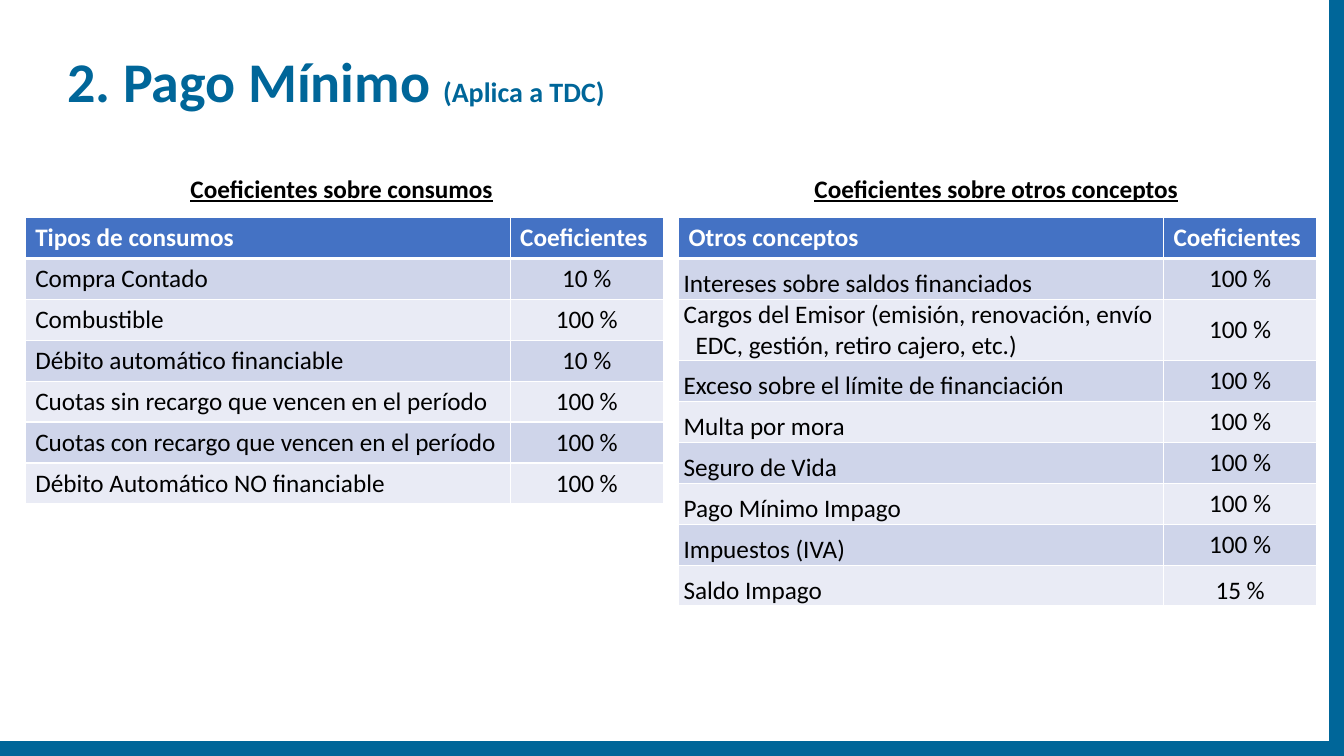
from lxml.etree import SubElement
from pptx import Presentation
from pptx.dml.color import RGBColor
from pptx.enum.shapes import MSO_SHAPE
from pptx.enum.text import MSO_ANCHOR, PP_ALIGN
from pptx.oxml.ns import qn
from pptx.util import Inches, Pt

FONT = "Calibri"
TEAL, BLUE, WHITE, BLACK = "006699", "4472C4", "FFFFFF", "000000"
BANDS = ("CFD5EA", "E9EBF5")
ROW_HEIGHT = 2.84 / 7
TABLE_TOP = 2.16
COLUMN_WIDTHS = (4.81, 1.52)
HANGING = Inches(0.12)

CONSUMPTION = [
    ("Tipos de consumos", "Coeficientes"),
    ("Compra Contado", "10 %"),
    ("Combustible", "100 %"),
    ("Débito automático financiable", "10 %"),
    ("Cuotas sin recargo que vencen en el período", "100 %"),
    ("Cuotas con recargo que vencen en el período", "100 %"),
    ("Débito Automático NO financiable", "100 %"),
]
OTHER_ITEMS = [
    ("Otros conceptos", "Coeficientes"),
    ("Intereses sobre saldos financiados", "100 %"),
    ("Cargos del Emisor (emisión, renovación, envío EDC, gestión, retiro cajero, etc.)", "100 %"),
    ("Exceso sobre el límite de financiación", "100 %"),
    ("Multa por mora", "100 %"),
    ("Seguro de Vida", "100 %"),
    ("Pago Mínimo Impago", "100 %"),
    ("Impuestos (IVA)", "100 %"),
    ("Saldo Impago", "15 %"),
]


def color(value):
    """Return the colour of a hex string."""
    return RGBColor.from_string(value)


def add_span(para, text, size, tint, bold=False, underline=False):
    """Add one formatted run to a paragraph."""
    span = para.add_run()
    span.text = text
    span.font.name = FONT
    span.font.size = Pt(size)
    span.font.bold = bold
    span.font.underline = underline
    span.font.color.rgb = color(tint)


def add_bar(page, left, top, width, height):
    """Place one teal edge bar."""
    bar = page.shapes.add_shape(
        MSO_SHAPE.RECTANGLE, Inches(left), Inches(top), Inches(width), Inches(height))
    bar.shadow.inherit = False
    bar.fill.solid()
    bar.fill.fore_color.rgb = color(TEAL)
    bar.line.color.rgb = color(TEAL)
    bar.line.width = Pt(1)


def add_title(page, left, top, width, height):
    """Place the slide title with its smaller remark."""
    box = page.shapes.add_textbox(Inches(left), Inches(top), Inches(width), Inches(height))
    box.text_frame.word_wrap = True
    box.text_frame.vertical_anchor = MSO_ANCHOR.MIDDLE
    para = box.text_frame.paragraphs[0]
    para.line_spacing = 0.9
    add_span(para, "2. Pago Mínimo ", 40, TEAL, bold=True)
    add_span(para, "(Aplica a TDC)", 20, TEAL, bold=True)


def add_heading(page, text, left, top, width, height):
    """Place an underlined table heading."""
    box = page.shapes.add_textbox(Inches(left), Inches(top), Inches(width), Inches(height))
    box.text_frame.word_wrap = False
    add_span(box.text_frame.paragraphs[0], text, 18, BLACK, bold=True, underline=True)


def set_borders(cell, top, bottom):
    """Draw white borders, with the top and bottom widths in points."""
    properties = cell._tc.get_or_add_tcPr()
    sides = (("a:lnL", 1), ("a:lnR", 1), ("a:lnT", top), ("a:lnB", bottom))
    for position, (side, points) in enumerate(sides):
        line = SubElement(properties, qn(side), w=str(Pt(points)))
        fill = SubElement(line, qn("a:solidFill"))
        SubElement(fill, qn("a:srgbClr"), val=WHITE)
        properties.insert(position, line)


def set_margins(cell, left):
    """Clear the cell margins except the left one."""
    cell.margin_left = Inches(left)
    cell.margin_right = cell.margin_top = cell.margin_bottom = 0


def add_coefficients(page, rows, left, top, tight=False, tall_row=None):
    """Place a banded table; tight bottom-aligns the labels with a hanging indent."""
    heights = [ROW_HEIGHT * (1.5 if index == tall_row else 1) for index in range(len(rows))]
    table = page.shapes.add_table(
        len(rows), len(COLUMN_WIDTHS), Inches(left), Inches(top),
        Inches(sum(COLUMN_WIDTHS)), Inches(sum(heights))).table
    for column, width in zip(table.columns, COLUMN_WIDTHS):
        column.width = Inches(width)
    for index, texts in enumerate(rows):
        table.rows[index].height = Inches(heights[index])
        header = index == 0
        for position, text in enumerate(texts):
            cell = table.cell(index, position)
            para = cell.text_frame.paragraphs[0]
            cell.fill.solid()
            cell.fill.fore_color.rgb = color(BLUE if header else BANDS[(index - 1) % 2])
            set_borders(cell, 3 if index == 1 else 1, 3 if header else 1)
            if not header and position == 1:
                set_margins(cell, 0)
                last_tight = tight and index == len(rows) - 1
                cell.vertical_anchor = MSO_ANCHOR.BOTTOM if last_tight else MSO_ANCHOR.MIDDLE
                para.alignment = PP_ALIGN.CENTER
            elif not header and tight:
                set_margins(cell, 0.05)
                cell.vertical_anchor = MSO_ANCHOR.BOTTOM
                indents = para._p.get_or_add_pPr()
                indents.set("marL", str(HANGING))
                indents.set("indent", str(-HANGING))
            add_span(para, text, 18, WHITE if header else BLACK, bold=header)


def build_page(deck):
    """Build the minimum payment slide."""
    page = deck.slides.add_slide(deck.slide_layouts[6])
    add_bar(page, 0, 7.36, 13.33, 0.14)
    add_bar(page, 13.19, 0, 0.14, 7.35)
    add_title(page, 0.57, 0.4, 11.84, 0.87)
    add_coefficients(page, CONSUMPTION, 0.25, TABLE_TOP)
    add_coefficients(page, OTHER_ITEMS, 6.73, TABLE_TOP, tight=True, tall_row=2)
    add_heading(page, "Coeficientes sobre consumos", 1.79, 1.67, 3.22, 0.4)
    add_heading(page, "Coeficientes sobre otros conceptos", 7.98, 1.67, 3.83, 0.4)


def main():
    """Create and save the deck."""
    deck = Presentation()
    deck.slide_width = Inches(13.33)
    deck.slide_height = Inches(7.5)
    build_page(deck)
    deck.save("out.pptx")


if __name__ == "__main__":
    main()
